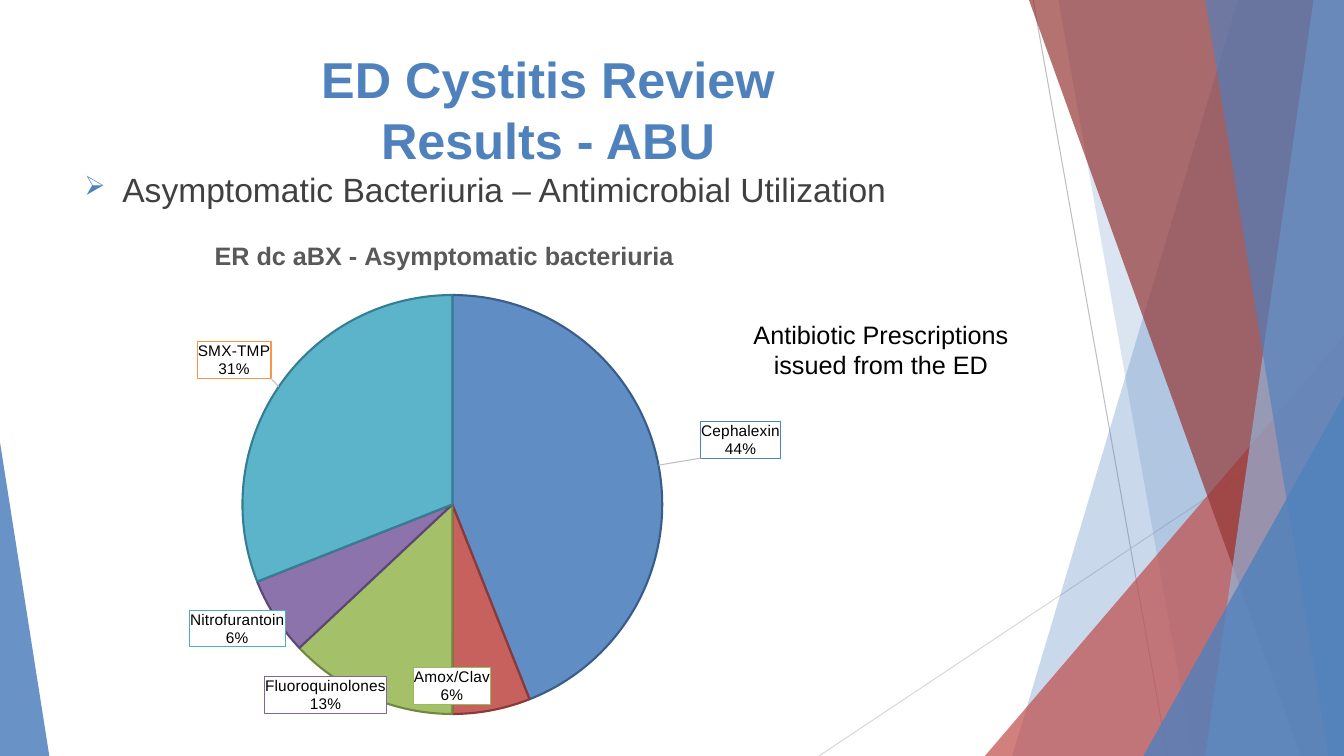
import pptx
import pptx.chart.data
import pptx.dml.color
import pptx.enum.chart
import pptx.enum.shapes
import pptx.enum.text
import pptx.oxml
import pptx.oxml.ns
import pptx.util

RGB = pptx.dml.color.RGBColor
qn = pptx.oxml.ns.qn
PX = 9525
PAGE_WIDTH, PAGE_HEIGHT = 1280, 720

BLUE = RGB(0x4F, 0x81, 0xBD)
PALE_BLUE = RGB(0x95, 0xB3, 0xD7)
RED = RGB(0xC0, 0x50, 0x4D)
DARK_RED = RGB(0x95, 0x37, 0x35)
GREEN = RGB(0x9B, 0xBB, 0x59)
PURPLE = RGB(0x80, 0x64, 0xA2)
TEAL = RGB(0x4B, 0xAC, 0xC6)
ORANGE = RGB(0xF7, 0x96, 0x46)
GREY = RGB(0xBF, 0xBF, 0xBF)
LIGHT_GREY = RGB(0xD9, 0xD9, 0xD9)
TITLE_GREY = RGB(0x59, 0x59, 0x59)
BODY_GREY = RGB(0x40, 0x40, 0x40)
BLACK = RGB(0, 0, 0)

# name, percent, slice fill, slice edge, label border, label shift in px
ANTIBIOTICS = [
    ("Cephalexin", 44, BLUE, RGB(0x38, 0x5D, 0x8A), BLUE, (122, -43)),
    ("Amox/Clav", 6, RED, RGB(0x8C, 0x38, 0x36), GREEN, (0, 0)),
    ("Fluoroquinolones", 13, GREEN, RGB(0x71, 0x89, 0x3F), PURPLE, (-102, 21)),
    ("Nitrofurantoin", 6, PURPLE, RGB(0x5C, 0x47, 0x76), TEAL, (-86, 32)),
    ("SMX-TMP", 31, TEAL, RGB(0x35, 0x7D, 0x91), ORANGE, (-82, -46)),
]

NAMESPACES = pptx.oxml.ns.nsdecls("c", "a")
LABEL_TEXT = (
    '<c:txPr><a:bodyPr/><a:p><a:pPr><a:defRPr sz="1100" b="0">'
    '<a:solidFill><a:srgbClr val="000000"/></a:solidFill><a:latin typeface="Arial"/>'
    "</a:defRPr></a:pPr></a:p></c:txPr>"
)
LABEL_CONTENT = (
    '<c:dLblPos val="inEnd"/><c:showLegendKey val="0"/><c:showVal val="0"/>'
    '<c:showCatName val="1"/><c:showSerName val="0"/><c:showPercent val="1"/>'
    '<c:showBubbleSize val="0"/><c:separator>\n</c:separator>'
)


def emu(*lengths):
    return [pptx.util.Emu(length * PX) for length in lengths]


def paint(fill, colour, opacity):
    """Solid fill with an opacity in percent."""
    fill.solid()
    fill.fore_color.rgb = colour
    tint = fill._xPr.find(qn("a:solidFill")).find(qn("a:srgbClr"))
    pptx.oxml.xmlchemy.OxmlElement  # alpha is a plain child element of the colour
    tint.append(pptx.oxml.parse_xml(
        f'<a:alpha {pptx.oxml.ns.nsdecls("a")} val="{opacity * 1000}"/>'))


def finish(shape, colour, opacity):
    shape.shadow.inherit = False
    shape.line.fill.background()
    paint(shape.fill, colour, opacity)


def add_thin_line(page, start, end, colour):
    line = page.shapes.add_connector(
        pptx.enum.shapes.MSO_CONNECTOR.STRAIGHT, *emu(*start, *end))
    line.line.color.rgb = colour
    line.line.width = pptx.util.Pt(0.75)
    line.element.spPr.append(
        pptx.oxml.parse_xml(f'<a:effectLst {pptx.oxml.ns.nsdecls("a")}/>'))


def add_band(page, top_left, bottom_left, colour, opacity):
    """Full-height panel with a slanted left edge, ending at the page's right edge."""
    builder = page.shapes.build_freeform(top_left, 0, scale=PX)
    builder.add_line_segments(
        [(PAGE_WIDTH, 0), (PAGE_WIDTH, PAGE_HEIGHT), (bottom_left, PAGE_HEIGHT)], close=True)
    finish(builder.convert_to_shape(), colour, opacity)


def add_corner(page, left, top, width, apex, colour, opacity):
    """Right-angled triangle standing on the page's bottom edge."""
    corner = page.shapes.add_shape(
        pptx.enum.shapes.MSO_SHAPE.ISOSCELES_TRIANGLE,
        *emu(left, top, width, PAGE_HEIGHT - top))
    corner.adjustments[0] = apex
    finish(corner, colour, opacity)


def add_backdrop(page):
    add_thin_line(page, (984, 0), (1112, 720), GREY)
    add_thin_line(page, (1280, 387), (780, 720), LIGHT_GREY)
    add_band(page, 1179, 964, BLUE, 30)
    add_band(page, 1008, 1136, BLUE, 20)
    add_corner(page, 938, 320, 342, 1, RED, 72)
    add_band(page, 980, 1239, DARK_RED, 70)
    add_band(page, 1251, 1148, PALE_BLUE, 70)
    add_band(page, 1148, 1265, BLUE, 65)
    add_corner(page, 1089, 377, 191, 1, BLUE, 80)
    add_corner(page, 0, 421, 47, 0, BLUE, 85)


def add_text(page, box, text, size, colour, bold=False, centred=True, middle=False):
    frame = page.shapes.add_textbox(*emu(*box)).text_frame
    frame.word_wrap = True
    anchors = pptx.enum.text.MSO_ANCHOR
    frame.vertical_anchor = anchors.MIDDLE if middle else anchors.TOP
    para = frame.paragraphs[0]
    para.text = text
    aligns = pptx.enum.text.PP_ALIGN
    para.alignment = aligns.CENTER if centred else aligns.LEFT
    for span in para.runs:
        span.font.name = "Arial"
        span.font.size = pptx.util.Pt(size)
        span.font.bold = bold
        span.font.color.rgb = colour
    return para


def add_bullet(para):
    para.space_before = pptx.util.Pt(10)
    properties = para._p.get_or_add_pPr()
    properties.set("marL", str(36 * PX))
    properties.set("indent", str(-36 * PX))
    for part in (f'buClr {NAMESPACES}><a:srgbClr val="{BLUE}"/></a:buClr>',
                 f'buSzPct {NAMESPACES} val="80000"/>',
                 f'buChar {NAMESPACES} char="➢"/>'):
        properties.append(pptx.oxml.parse_xml("<a:" + part))


def set_layout(parent, index, inner=False, **fractions):
    for old in parent.findall(qn("c:layout")):
        parent.remove(old)
    target = '<c:layoutTarget val="inner"/>' if inner else ""
    modes = '<c:xMode val="edge"/><c:yMode val="edge"/>'
    sizes = "".join(f'<c:{key} val="{value}"/>' for key, value in fractions.items())
    parent.insert(index, pptx.oxml.parse_xml(
        f"<c:layout {NAMESPACES}><c:manualLayout>{target}{modes}{sizes}"
        "</c:manualLayout></c:layout>"))


def label_xml(index, border, shift, width, height):
    across, down = shift
    layout = (f'<c:layout><c:manualLayout><c:x val="{across / width:.3f}"/>'
              f'<c:y val="{down / height:.3f}"/></c:manualLayout></c:layout>') if any(shift) else ""
    look = ('<c:spPr><a:solidFill><a:srgbClr val="FFFFFF"/></a:solidFill><a:ln w="9525">'
            f'<a:solidFill><a:srgbClr val="{border}"/></a:solidFill></a:ln></c:spPr>')
    return f'<c:dLbl><c:idx val="{index}"/>{layout}{look}{LABEL_TEXT}{LABEL_CONTENT}</c:dLbl>'


def add_pie(page, box):
    data = pptx.chart.data.CategoryChartData()
    data.categories = [row[0] for row in ANTIBIOTICS]
    data.add_series("Series 1", [row[1] for row in ANTIBIOTICS])
    chart = page.shapes.add_chart(
        pptx.enum.chart.XL_CHART_TYPE.PIE, *emu(*box), data).chart
    chart.has_legend = False
    chart.font.name = "Karla"
    chart.font.size = pptx.util.Pt(10)
    chart.font.color.rgb = BLACK

    heading = chart.chart_title.text_frame.paragraphs[0]
    heading.text = "ER dc aBX - Asymptomatic bacteriuria"
    font = heading.runs[0].font
    font.name, font.size, font.bold = "Arial", pptx.util.Pt(18), True
    font.color.rgb = TITLE_GREY
    set_layout(chart.chart_title._element, 1, x=0.16, y=0.04)

    plot = chart.plots[0]
    plot.vary_by_categories = True
    set_layout(plot._element.getparent(), 0, inner=True, x=0.03, y=0.16, w=0.95, h=0.84)
    series = plot.series[0]
    labels = ""
    for index, (_, _, colour, edge, border, shift) in enumerate(ANTIBIOTICS):
        look = series.points[index].format
        paint(look.fill, colour, 90)
        look.line.color.rgb = edge
        look.line.width = pptx.util.Pt(1.5)
        labels += label_xml(index, border, shift, *box[2:])
    series._element.find(qn("c:cat")).addprevious(pptx.oxml.parse_xml(
        f"<c:dLbls {NAMESPACES}>{labels}{LABEL_TEXT}{LABEL_CONTENT}"
        '<c:showLeaderLines val="1"/><c:leaderLines><c:spPr><a:ln w="9525"><a:solidFill>'
        f'<a:srgbClr val="{GREY}"/></a:solidFill></a:ln></c:spPr></c:leaderLines></c:dLbls>'))


def main():
    deck = pptx.Presentation()
    deck.slide_width, deck.slide_height = emu(PAGE_WIDTH, PAGE_HEIGHT)
    page = deck.slides.add_slide(deck.slide_layouts[6])
    add_backdrop(page)
    add_text(page, (71, 38, 902, 131), "ED Cystitis Review\vResults - ABU", 36, BLUE,
             bold=True, middle=True)
    add_bullet(add_text(page, (71, 156, 902, 525),
                        "Asymptomatic Bacteriuria – Antimicrobial Utilization",
                        24, BODY_GREY, centred=False))
    add_text(page, (694, 299, 290, 68), "Antibiotic Prescriptions issued from the ED", 18, BLACK)
    add_pie(page, (93, 205, 669, 476))
    deck.save("out.pptx")


if __name__ == "__main__":
    main()
